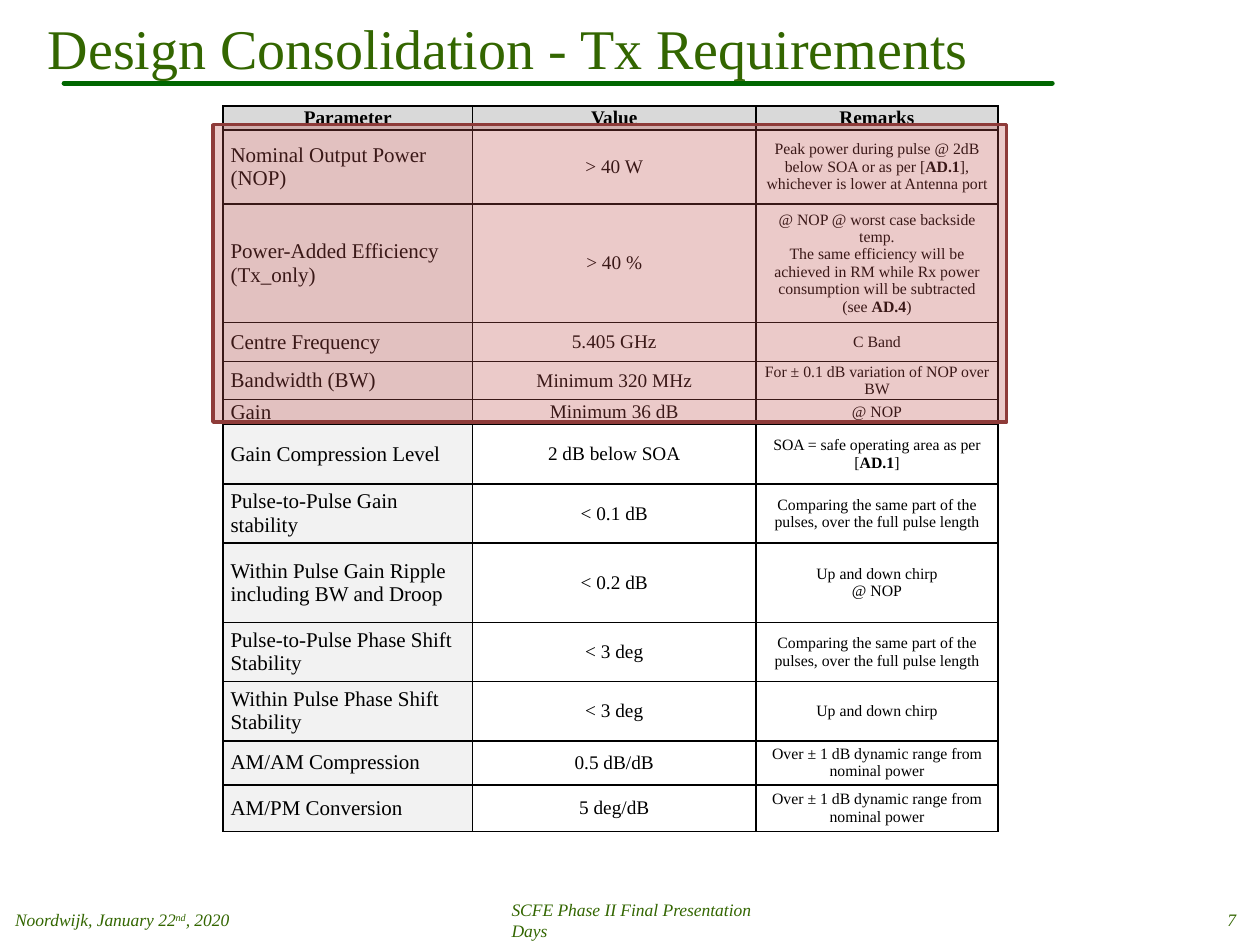
from lxml.etree import SubElement
from pptx import Presentation
from pptx.dml.color import RGBColor
from pptx.enum.shapes import MSO_CONNECTOR, MSO_SHAPE
from pptx.enum.text import MSO_ANCHOR, MSO_AUTO_SIZE, PP_ALIGN
from pptx.oxml import parse_xml
from pptx.oxml.ns import nsdecls, qn
from pptx.util import Inches, Pt

GREEN = RGBColor(0x33, 0x66, 0x00)
RULE = RGBColor(0x00, 0x66, 0x00)
BLACK = RGBColor(0x00, 0x00, 0x00)
WHITE = RGBColor(0xFF, 0xFF, 0xFF)
HEAD = RGBColor(0xD9, 0xD9, 0xD9)
SIDE = RGBColor(0xF2, 0xF2, 0xF2)
RED = RGBColor(0xC0, 0x50, 0x4D)
DARK = RGBColor(0x8E, 0x3B, 0x39)

LEFT, MID, RIGHT = PP_ALIGN.LEFT, PP_ALIGN.CENTER, PP_ALIGN.RIGHT
WIDTHS = [1.98, 2.25, 1.92]

# Columns: fill, text size, alignment
COLS = [(SIDE, 12, LEFT), (WHITE, 11, MID), (WHITE, 9, MID)]

# Rows: height, parameter, value, remark paragraphs
# In the texts, *...* is bold and | breaks the line
ROWS = [
    (0.59, "Nominal Output Power (NOP)", "> 40 W",
     ["Peak power during pulse @ 2dB below SOA or as per [*AD.1*], "
      "whichever is lower at Antenna port"]),
    (0.94, "Power-Added Efficiency|(Tx_only)", "> 40 %",
     ["@ NOP @ worst case backside temp.",
      "The same efficiency will be achieved in RM while Rx power "
      "consumption will be subtracted|(see *AD.4*)"]),
    (0.31, "Centre Frequency", "5.405 GHz", ["C Band"]),
    (0.24, "Bandwidth (BW)", "Minimum 320 MHz",
     ["For ± 0.1 dB variation of NOP over BW"]),
    (0.16, "Gain", "Minimum 36 dB", ["@ NOP"]),
    (0.47, "Gain Compression Level", "2 dB below SOA",
     ["SOA = safe operating area as per [*AD.1*]"]),
    (0.47, "Pulse-to-Pulse Gain stability", "< 0.1 dB",
     ["Comparing the same part of the pulses, over the full pulse length"]),
    (0.63, "Within Pulse Gain Ripple including BW and Droop", "< 0.2 dB",
     ["Up and down chirp", "@ NOP"]),
    (0.47, "Pulse-to-Pulse Phase Shift Stability", "< 3 deg",
     ["Comparing the same part of the pulses, over the full pulse length"]),
    (0.47, "Within Pulse Phase Shift Stability", "< 3 deg",
     ["Up and down chirp"]),
    (0.35, "AM/AM Compression", "0.5 dB/dB",
     ["Over ± 1 dB dynamic range from nominal power"]),
    (0.37, "AM/PM Conversion", "5 deg/dB",
     ["Over ± 1 dB dynamic range from nominal power"]),
]


class Deck:
    font = "Times New Roman"

    def __init__(self):
        self.prs = Presentation()
        self.prs.slide_width, self.prs.slide_height = Inches(10), Inches(7.5)
        self.slide = self.prs.slides.add_slide(self.prs.slide_layouts[5])

    def run(self, para, text, size, color, bold=False, italic=False):
        run = para.add_run()
        run.text = text
        font = run.font
        font.name, font.size = self.font, Pt(size)
        font.bold, font.italic = bold, italic
        font.color.rgb = color
        return run

    def title(self, text, left, top, width, height):
        box = self.slide.shapes.title
        box.left, box.top = Inches(left), Inches(top)
        box.width, box.height = Inches(width), Inches(height)
        frame = box.text_frame
        frame.auto_size = MSO_AUTO_SIZE.NONE
        frame.vertical_anchor = MSO_ANCHOR.MIDDLE
        para = frame.paragraphs[0]
        para.alignment = LEFT
        self.run(para, text, 32, GREEN)

    def rule(self, x1, x2, y):
        line = self.slide.shapes.add_connector(
            MSO_CONNECTOR.STRAIGHT, Inches(x1), Inches(y), Inches(x2), Inches(y))
        line.line.color.rgb, line.line.width = RULE, Pt(3)
        line.line._get_or_add_ln().set("cap", "rnd")
        SubElement(line._element.spPr, qn("a:effectLst"))

    def footer(self, parts, left, width, align=LEFT):
        box = self.slide.shapes.add_textbox(
            Inches(left), Inches(7.14), Inches(width), Inches(0.32))
        frame = box.text_frame
        frame.word_wrap = False
        frame.vertical_anchor = MSO_ANCHOR.MIDDLE
        frame.margin_left = frame.margin_right = 0
        frame.margin_top = frame.margin_bottom = Inches(0.08)
        para = frame.paragraphs[0]
        para.alignment = align
        for text, raised in parts:
            run = self.run(para, text, 10, GREEN, italic=True)
            if raised:
                run._r.get_or_add_rPr().set("baseline", "30000")

    def cell(self, cell, paras, fill, size, align, bold=False):
        # Borders come before the fill
        props = cell._tc.get_or_add_tcPr()
        for side in "LRTB":
            props.append(parse_xml(
                f'<a:ln{side} {nsdecls("a")} w="12700"><a:solidFill>'
                f'<a:srgbClr val="{BLACK}"/></a:solidFill></a:ln{side}>'))
        cell.fill.solid()
        cell.fill.fore_color.rgb = fill
        cell.vertical_anchor = MSO_ANCHOR.MIDDLE
        cell.margin_left = cell.margin_right = Inches(0.06)
        cell.margin_top = cell.margin_bottom = 0
        frame = cell.text_frame
        for i, text in enumerate(paras):
            para = frame.add_paragraph() if i else frame.paragraphs[0]
            para.alignment = align
            for j, part in enumerate(text.split("*")):
                for k, line in enumerate(part.split("|")):
                    if k:
                        para.add_line_break()
                    self.run(para, line, size, BLACK, bold or j % 2 == 1)

    def table(self, left, top, heads, rows):
        heights = [0.19] + [row[0] for row in rows]
        table = self.slide.shapes.add_table(
            len(heights), len(heads), Inches(left), Inches(top),
            Inches(sum(WIDTHS)), Inches(sum(heights))).table
        table.horz_banding = False
        for col, width in zip(table.columns, WIDTHS):
            col.width = Inches(width)
        for row, height in zip(table.rows, heights):
            row.height = Inches(height)
        for c, text in enumerate(heads):
            self.cell(table.cell(0, c), [text], HEAD, 11, MID, bold=True)
        for r, (_, name, value, notes) in enumerate(rows, 1):
            for c, paras in enumerate([[name], [value], notes]):
                self.cell(table.cell(r, c), paras, *COLS[c])

    def marker(self, left, top, width, height):
        box = self.slide.shapes.add_shape(
            MSO_SHAPE.RECTANGLE, Inches(left), Inches(top),
            Inches(width), Inches(height))
        box.shadow.inherit = False
        box.fill.solid()
        box.fill.fore_color.rgb = RED
        tint = box._element.spPr.find(qn("a:solidFill"))[0]
        SubElement(tint, qn("a:alpha")).set("val", "30000")
        box.line.color.rgb, box.line.width = DARK, Pt(2)


def main():
    deck = Deck()

    # Heading and footer
    deck.rule(0.51, 8.35, 0.66)
    deck.footer([("Noordwijk, January 22", False), ("nd", True),
                 (", 2020", False)], 0.12, 1.89)
    deck.footer([("SCFE Phase II Final Presentation Days", False)], 4.06, 2.05)
    deck.footer([("7", False)], 8.39, 1.42, RIGHT)
    deck.title("Design Consolidation - Tx Requirements", 0.28, 0.07, 8.19, 0.61)

    # Requirements, with the key rows marked
    deck.table(1.77, 0.84, ["Parameter", "Value", "Remarks"], ROWS)
    deck.marker(1.69, 0.99, 6.3, 2.36)

    deck.prs.save("out.pptx")


if __name__ == "__main__":
    main()
